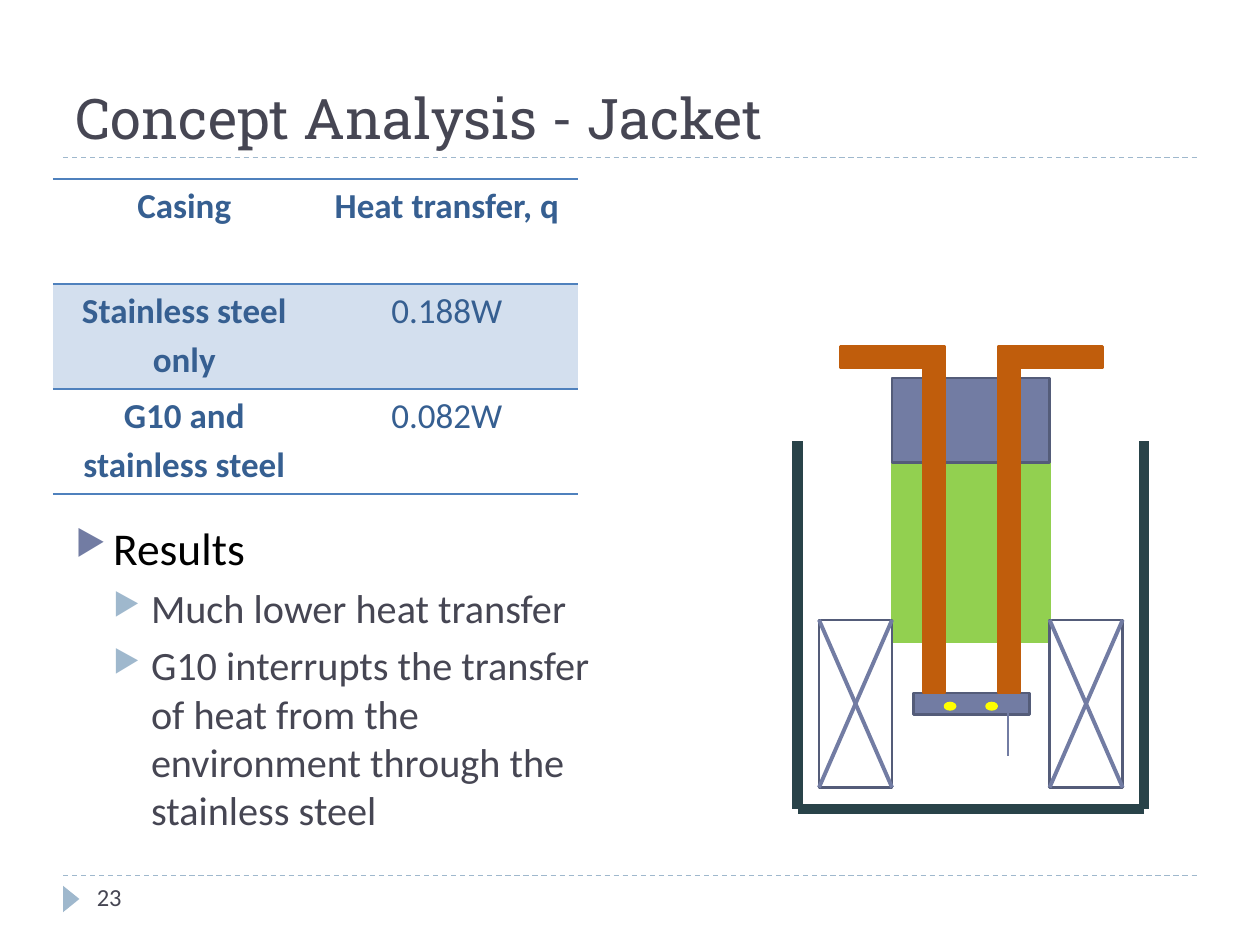
from lxml import etree
from pptx import Presentation
from pptx.dml.color import RGBColor
from pptx.enum import dml, shapes, text
from pptx.oxml import parse_xml
from pptx.oxml.ns import nsdecls, qn
from pptx.util import Inches, Pt

INK, SLATE, SLATE_EDGE, PALE_BLUE = "464653", "727CA3", "545C79", "9FB8CD"
COPPER, GREEN, YELLOW, WALL = "C05D0C", "92D050", "FFFF00", "294349"
TABLE_TEXT, TABLE_RULE, TABLE_BAND = "365F91", "4F81BD", "D3DFEE"
RECT = shapes.MSO_SHAPE.RECTANGLE
NO_STYLE = "{2D5ABB26-0587-4C30-8999-92F81FD0307C}"

ROWS = [
    ("Casing", "Heat transfer, q"),
    ("Stainless steel only", "0.188W"),
    ("G10 and stainless steel", "0.082W"),
]
RESULTS = [
    (0, "Results"),
    (1, "Much lower heat transfer"),
    (1, "G10 interrupts the transfer of heat from the environment "
        "through the stainless steel"),
]
LEFT_WIRE = [
    (7.56, 5.59), (7.57, 5.56), (7.59, 5.46), (7.6, 5.18), (7.61, 4.68),
    (7.59, 4.57), (7.6, 4.14), (7.61, 4.11), (7.6, 3.97), (7.59, 3.75),
    (7.58, 3.7), (7.56, 3.58),
]
RIGHT_WIRE = [
    (7.88, 5.59), (7.85, 5.58), (7.84, 5.55), (7.83, 5.4), (7.84, 5.13),
    (7.85, 5.1), (7.84, 4.9), (7.85, 4.87), (7.87, 4.7), (7.85, 4.48),
    (7.83, 4.21), (7.84, 4.05), (7.85, 4.02), (7.83, 3.9), (7.84, 3.58),
]


def color(value):
    return RGBColor.from_string(value)


def style_text(para, size, ink, bold=False, font="Calibri"):
    for span in para.runs:
        span.font.name = font
        span.font.size = Pt(size)
        span.font.bold = bold
        span.font.color.rgb = color(ink)


def add_block(page, box, fill, edge, kind=RECT):
    block = page.shapes.add_shape(kind, *map(Inches, box))
    block.shadow.inherit = False
    block.fill.solid()
    block.fill.fore_color.rgb = color(fill)
    if edge:
        block.line.color.rgb = color(edge)
        block.line.width = Pt(1.5)
    else:
        block.line.fill.background()
    return block


def add_line(page, start, end, ink, width, dashed=False):
    line = page.shapes.add_connector(
        shapes.MSO_CONNECTOR.STRAIGHT, *map(Inches, start + end))
    line.line.color.rgb = color(ink)
    line.line.width = Pt(width)
    if dashed:
        line.line.dash_style = dml.MSO_LINE.DASH
    etree.SubElement(line._element.spPr, qn("a:effectLst"))


def add_wire(page, points):
    builder = page.shapes.build_freeform(*points[0], scale=Inches(1))
    builder.add_line_segments(points[1:], close=False)
    wire = builder.convert_to_shape()
    wire.shadow.inherit = False
    wire.fill.background()
    wire.line.color.rgb = color(SLATE)
    wire.line.width = Pt(0.75)


def add_text_box(page, box):
    frame = page.shapes.add_textbox(*map(Inches, box)).text_frame
    frame.word_wrap = True
    return frame


def add_bullet(para, level, ink):
    props = para._p.get_or_add_pPr()
    props.set("marL", str(Inches(0.3 * (level + 1))))
    props.set("indent", str(Inches(-0.3)))
    for xml in (f'<a:buClr {nsdecls("a")}><a:srgbClr val="{ink}"/></a:buClr>',
                f'<a:buSzPct {nsdecls("a")} val="76000"/>',
                f'<a:buChar {nsdecls("a")} char="▶"/>'):
        props.append(parse_xml(xml))


def add_cell_rule(cell, side):
    cell._tc.get_or_add_tcPr().insert(0, parse_xml(
        f'<a:{side} {nsdecls("a")} w="12700"><a:solidFill>'
        f'<a:srgbClr val="{TABLE_RULE}"/></a:solidFill></a:{side}>'))


def add_title(page):
    title = page.shapes.title
    title.left, title.top, title.width, title.height = map(
        Inches, (0.5, 0.25, 9, 1))
    frame = title.text_frame
    frame.text = "Concept Analysis - Jacket"
    frame.auto_size = text.MSO_AUTO_SIZE.NONE
    frame.vertical_anchor = text.MSO_ANCHOR.BOTTOM
    frame.paragraphs[0].alignment = text.PP_ALIGN.LEFT
    style_text(frame.paragraphs[0], 32, INK, font="Roboto Slab")


def add_heat_table(page):
    frame = page.shapes.add_table(
        3, 2, *map(Inches, (0.42, 1.42, 4.17, 2.5)))
    table = frame.table
    table.first_row = table.horz_banding = False
    table._tbl.tblPr.find(qn("a:tableStyleId")).text = NO_STYLE
    for r, row in enumerate(ROWS):
        for c, words in enumerate(row):
            cell = table.cell(r, c)
            cell.margin_left = cell.margin_right = Inches(0.07)
            cell.margin_top = cell.margin_bottom = 0
            cell.text_frame.text = words
            para = cell.text_frame.paragraphs[0]
            para.alignment = text.PP_ALIGN.CENTER
            para.line_spacing = 1.15
            style_text(para, 20, TABLE_TEXT, bold=r == 0 or c == 0)
            if r == 1:
                cell.fill.solid()
                cell.fill.fore_color.rgb = color(TABLE_BAND)
            else:
                cell.fill.background()
            add_cell_rule(cell, "lnB" if r == 2 else "lnT")


def add_results(page):
    frame = add_text_box(page, (0.5, 4.08, 4.42, 2.75))
    for i, (level, words) in enumerate(RESULTS):
        para = frame.add_paragraph() if i else frame.paragraphs[0]
        para.text = words
        para.level = level
        para.space_before = Pt(5 if level else 6)
        style_text(para, *((23, INK) if level else (26, "000000")))
        add_bullet(para, level, PALE_BLUE if level else SLATE)


def add_footer(page):
    marker = add_block(page, (0.46, 7.07, 0.21, 0.13), PALE_BLUE, None,
                       shapes.MSO_SHAPE.ISOSCELES_TRIANGLE)
    marker.rotation = 90
    para = add_text_box(page, (0.67, 6.95, 2.17, 0.4)).paragraphs[0]
    para.text = "23"
    style_text(para, 14, INK)


def add_jacket_diagram(page):
    # Casing, copper arms and sample plate
    add_block(page, (7.08, 3.67, 1.25, 1.42), GREEN, GREEN)
    add_block(page, (7.08, 3, 1.25, 0.67), SLATE, SLATE_EDGE)
    for left in (6.67, 7.92):
        add_block(page, (left, 2.75, 0.83, 0.17), COPPER, COPPER)
    add_block(page, (7.25, 5.5, 0.92, 0.17), SLATE, SLATE_EDGE)

    # Sensors and their wires
    for left, wire in ((7.5, LEFT_WIRE), (7.83, RIGHT_WIRE)):
        add_block(page, (left, 5.58, 0.08, 0.05), YELLOW, YELLOW,
                  shapes.MSO_SHAPE.OVAL)
        add_wire(page, wire)

    # Vessel walls and floor
    for x in (6.33, 9.08):
        add_line(page, (x, 3.5), (x, 6.42), WALL, 6)
    add_line(page, (6.33, 6.42), (9.08, 6.42), WALL, 6)

    # Crossed magnet coils
    top, width, height = 4.92, 0.58, 1.33
    for left in (6.5, 8.33):
        add_block(page, (left, top, width, height), "FFFFFF", SLATE_EDGE)
        right, bottom = left + width, top + height
        add_line(page, (left, top), (right, bottom), SLATE, 2.25)
        add_line(page, (left, bottom), (right, top), SLATE, 2.25)

    # Copper rods
    for left in (7.33, 7.92):
        add_block(page, (left, 2.92, 0.17, 2.58), COPPER, COPPER)


def main():
    deck = Presentation()
    deck.slide_width, deck.slide_height = Inches(10), Inches(7.5)
    page = deck.slides.add_slide(deck.slide_layouts[5])
    for y in (6.95, 1.25):
        add_line(page, (0.5, y), (9.5, y), PALE_BLUE, 0.75, dashed=True)
    add_title(page)
    add_heat_table(page)
    add_results(page)
    add_footer(page)
    add_jacket_diagram(page)
    deck.save("out.pptx")


if __name__ == "__main__":
    main()
